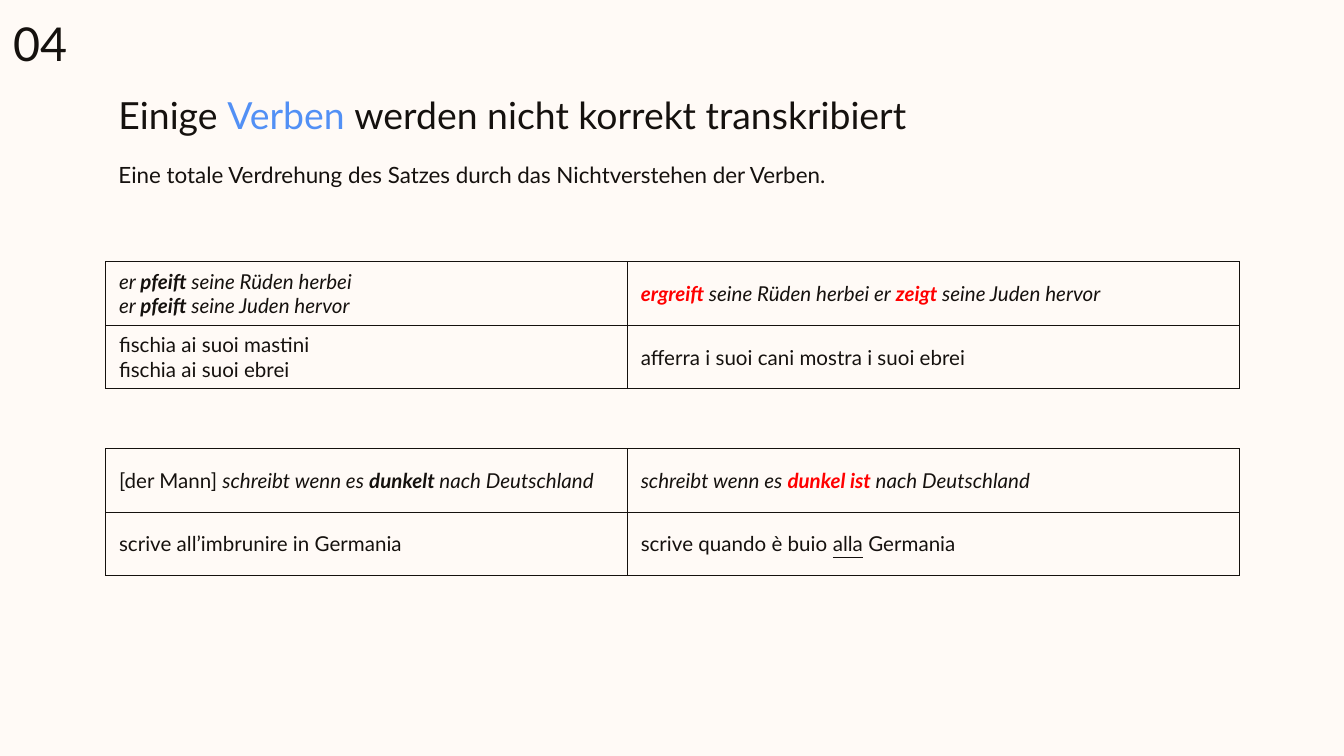
"""Build a slide that compares wrongly transcribed verbs in two tables."""
from lxml.etree import fromstring
from pptx import Presentation
from pptx.dml.color import RGBColor as Rgb
from pptx.enum.text import MSO_ANCHOR as Anchor
from pptx.util import Cm, Pt

INK, BLUE, RED = "15110E", "5290F5", "FF0000"
NS = "http://schemas.openxmlformats.org/drawingml/2006/main"


def tint(code):
    return Rgb.from_string(code)


def write(frame, lines, size):
    for n, line in enumerate(lines):
        para = frame.paragraphs[0] if n == 0 else frame.add_paragraph()
        for text, style in line:
            run = para.add_run()
            run.text = text
            font = run.font
            font.name, font.size = "Lato", Pt(size)
            font.italic, font.bold = "i" in style, "b" in style
            font.underline = "u" in style
            color = RED if "r" in style else BLUE if "v" in style else INK
            font.color.rgb = tint(color)


deck = Presentation()
deck.slide_width, deck.slide_height = Cm(25.4), Cm(14.29)
slide = deck.slides.add_slide(deck.slide_layouts[6])
back = slide.background.fill
back.solid()
back.fore_color.rgb = tint("FFFAF6")

title = [("Einige ", ""), ("Verben ", "v"),
         ("werden nicht korrekt transkribiert", "")]
note = "Eine totale Verdrehung des Satzes durch das Nichtverstehen der Verben."
boxes = [
    (0, 0.03, 2.5, 2.06, 25, [("04", "")]),
    (1.99, 1.5, 21.43, 1.52, 20, title),
    (1.99, 2.79, 21.43, 1.02, 12, [(note, "")]),
]
for left, top, width, height, size, line in boxes:
    frame = slide.shapes.add_textbox(
        Cm(left), Cm(top), Cm(width), Cm(height)).text_frame
    frame.word_wrap = True
    frame.margin_left = frame.margin_right = Cm(0.25)
    frame.margin_top = frame.margin_bottom = Cm(0.25)
    write(frame, [line], size)

dogs = [
    [[[("er ", "i"), ("pfeift ", "ib"), ("seine Rüden herbei", "i")],
      [("er ", "i"), ("pfeift ", "ib"), ("seine Juden hervor", "i")]],
     [[("ergreift ", "ibr"), ("seine Rüden herbei er ", "i"),
       ("zeigt ", "ibr"), ("seine Juden hervor", "i")]]],
    [[[("fischia ai suoi mastini", "")], [("fischia ai suoi ebrei", "")]],
     [[("afferra i suoi cani mostra i suoi ebrei", "")]]],
]
dusk = [
    [[[("[der Mann] ", ""), ("schreibt wenn es ", "i"),
       ("dunkelt ", "ib"), ("nach Deutschland", "i")]],
     [[("schreibt wenn es ", "i"), ("dunkel ist ", "ibr"),
       ("nach Deutschland", "i")]]],
    [[[("scrive all’imbrunire in Germania", "")]],
     [[("scrive quando è buio ", ""), ("alla", "u"), (" Germania", "")]]],
]
wide, high = (9.86, 11.56), 1.2
for top, rows in ((4.95, dogs), (8.48, dusk)):
    table = slide.shapes.add_table(
        2, 2, Cm(2), Cm(top), Cm(sum(wide)), Cm(2 * high)).table
    table.first_row = table.horz_banding = False
    for n, width in enumerate(wide):
        table.columns[n].width = Cm(width)
    for r, row in enumerate(rows):
        table.rows[r].height = Cm(high)
        for c, lines in enumerate(row):
            cell = table.cell(r, c)
            cell.fill.background()
            cell.vertical_anchor = Anchor.MIDDLE
            cell.margin_left = cell.margin_right = Cm(0.25)
            cell.margin_top = cell.margin_bottom = 0
            write(cell.text_frame, lines, 11)
            props = cell._tc.get_or_add_tcPr()
            for n, side in enumerate("LRTB"):
                props.insert(n, fromstring(
                    f'<a:ln{side} xmlns:a="{NS}" w="{Pt(0.75)}"><a:solidFill>'
                    f'<a:srgbClr val="{INK}"/></a:solidFill></a:ln{side}>'))

deck.save("out.pptx")
